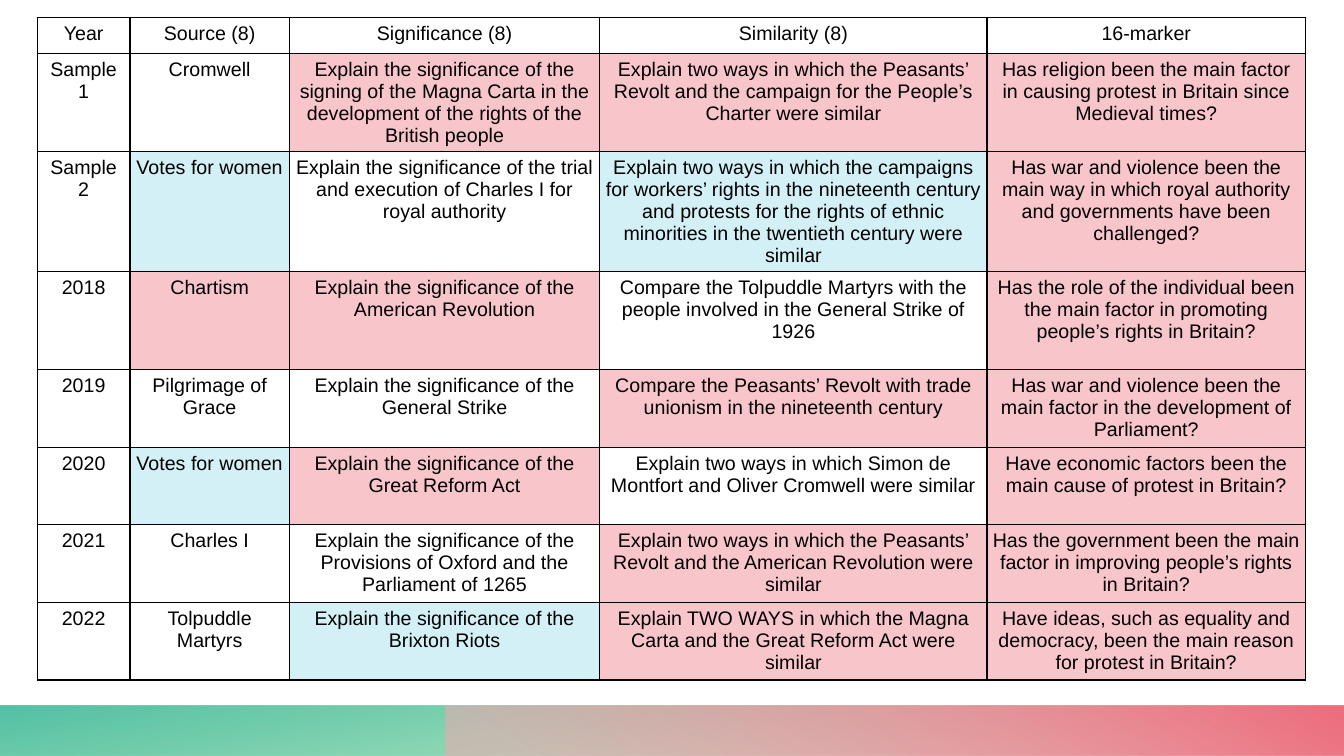
from pptx import Presentation
from pptx.dml.color import RGBColor
from pptx.enum.shapes import MSO_SHAPE as Shape
from pptx.enum.text import PP_ALIGN as Align
from pptx.oxml import parse_xml
from pptx.oxml.ns import nsdecls, qn
from pptx.util import Inches, Pt

PINK, BLUE = "F8C5CB", "D3F0F6"
FILLS = {"P": PINK, "B": BLUE}

COLUMN_WIDTHS = [0.92, 1.58, 3.08, 3.84, 3.16]
ROW_HEIGHTS = [0.36, 0.97, 1.18, 0.97] + [0.77] * 4

# One letter per column: P pink, B blue, - no fill
QUESTIONS = [
    ("-----", "Year", "Source (8)", "Significance (8)", "Similarity (8)", "16-marker"),
    ("--PPP", "Sample 1", "Cromwell",
     "Explain the significance of the signing of the Magna Carta in the development "
     "of the rights of the British people",
     "Explain two ways in which the Peasants’ Revolt and the campaign for the "
     "People’s Charter were similar",
     "Has religion been the main factor in causing protest in Britain since Medieval times?"),
    ("-B-BP", "Sample 2", "Votes for women",
     "Explain the significance of the trial and execution of Charles I for royal authority",
     "Explain two ways in which the campaigns for workers’ rights in the nineteenth century "
     "and protests for the rights of ethnic minorities in the twentieth century were similar",
     "Has war and violence been the main way in which royal authority and governments "
     "have been challenged?"),
    ("-PP-P", "2018", "Chartism",
     "Explain the significance of the American Revolution",
     "Compare the Tolpuddle Martyrs with the people involved in the General Strike of 1926",
     "Has the role of the individual been the main factor in promoting people’s rights "
     "in Britain?"),
    ("---PP", "2019", "Pilgrimage of Grace",
     "Explain the significance of the General Strike",
     "Compare the Peasants’ Revolt with trade unionism in the nineteenth century",
     "Has war and violence been the main factor in the development of Parliament?"),
    ("-BP-P", "2020", "Votes for women",
     "Explain the significance of the Great Reform Act",
     "Explain two ways in which Simon de Montfort and Oliver Cromwell were similar",
     "Have economic factors been the main cause of protest in Britain?"),
    ("---PP", "2021", "Charles I",
     "Explain the significance of the Provisions of Oxford and the Parliament of 1265",
     "Explain two ways in which the Peasants’ Revolt and the American Revolution were similar",
     "Has the government been the main factor in improving people’s rights in Britain?"),
    ("--BPP", "2022", "Tolpuddle Martyrs",
     "Explain the significance of the Brixton Riots",
     "Explain TWO WAYS in which the Magna Carta and the Great Reform Act were similar",
     "Have ideas, such as equality and democracy, been the main reason for protest in Britain?"),
]


def color(hex_value):
    return RGBColor.from_string(hex_value)


class SlideBuilder:
    font_name = "Arial"
    font_size = Pt(14)
    ink = "000000"
    border_width = Pt(1)
    inset = Inches(0.05)

    def __init__(self, slide):
        self.slide = slide

    def gradient_band(self, left, width, stops, angle, rotation=0):
        """Mirrored footer band; stops are (position %, colour, opacity %)."""
        shape = self.slide.shapes.add_shape(
            Shape.RECTANGLE, Inches(left), Inches(7), Inches(width), Inches(0.5))
        shape.shadow.inherit = False
        shape.line.fill.background()
        shape.fill.background()
        shape.rotation = rotation
        properties = shape._element.spPr
        properties.find(qn("a:xfrm")).set("flipH", "1")
        stop_xml = "".join(
            f'<a:gs pos="{position * 1000}"><a:srgbClr val="{hex_value}">'
            f'<a:alpha val="{opacity * 1000}"/></a:srgbClr></a:gs>'
            for position, hex_value, opacity in stops)
        gradient = parse_xml(
            f'<a:gradFill {nsdecls("a")} rotWithShape="1"><a:gsLst>{stop_xml}</a:gsLst>'
            f'<a:lin ang="{angle * 60000}" scaled="0"/></a:gradFill>')
        properties.replace(properties.find(qn("a:noFill")), gradient)

    def table(self, left, top, widths, heights, rows):
        frame = self.slide.shapes.add_table(
            len(heights), len(widths), Inches(left), Inches(top),
            Inches(sum(widths)), Inches(sum(heights)))
        table = frame.table
        table.first_row = table.horz_banding = False
        for column, width in zip(table.columns, widths):
            column.width = Inches(width)
        for row, height, (fills, *texts) in zip(table.rows, heights, rows):
            row.height = Inches(height)
            for cell, fill, text in zip(row.cells, fills, texts):
                self.cell(cell, text, FILLS.get(fill))

    def cell(self, cell, text, fill):
        cell.margin_left = cell.margin_right = self.inset
        cell.margin_top = cell.margin_bottom = self.inset
        cell.text_frame.text = text
        paragraph = cell.text_frame.paragraphs[0]
        paragraph.alignment = Align.CENTER
        font = paragraph.runs[0].font
        font.name, font.size, font.bold = self.font_name, self.font_size, False
        font.color.rgb = color(self.ink)
        # Borders come before the fill in the cell properties
        for side in "LRTB":
            cell._tc.get_or_add_tcPr().append(parse_xml(
                f'<a:ln{side} {nsdecls("a")} w="{self.border_width}"><a:solidFill>'
                f'<a:srgbClr val="{self.ink}"/></a:solidFill></a:ln{side}>'))
        if fill:
            cell.fill.solid()
            cell.fill.fore_color.rgb = color(fill)
        else:
            cell.fill.background()


def main():
    presentation = Presentation()
    presentation.slide_width = Inches(13.33)
    presentation.slide_height = Inches(7.5)
    builder = SlideBuilder(presentation.slides.add_slide(presentation.slide_layouts[6]))

    # Footer bands
    builder.gradient_band(0, 13.33, [(14, "30BA5F", 28), (100, "35B697", 85)], 100, rotation=180)
    builder.gradient_band(4.42, 8.91, [(9, "F5A8B1", 55), (99, "EE6E7D", 100)], 240)

    # Exam question overview
    builder.table(0.37, 0.17, COLUMN_WIDTHS, ROW_HEIGHTS, QUESTIONS)

    presentation.save("out.pptx")


if __name__ == "__main__":
    main()
